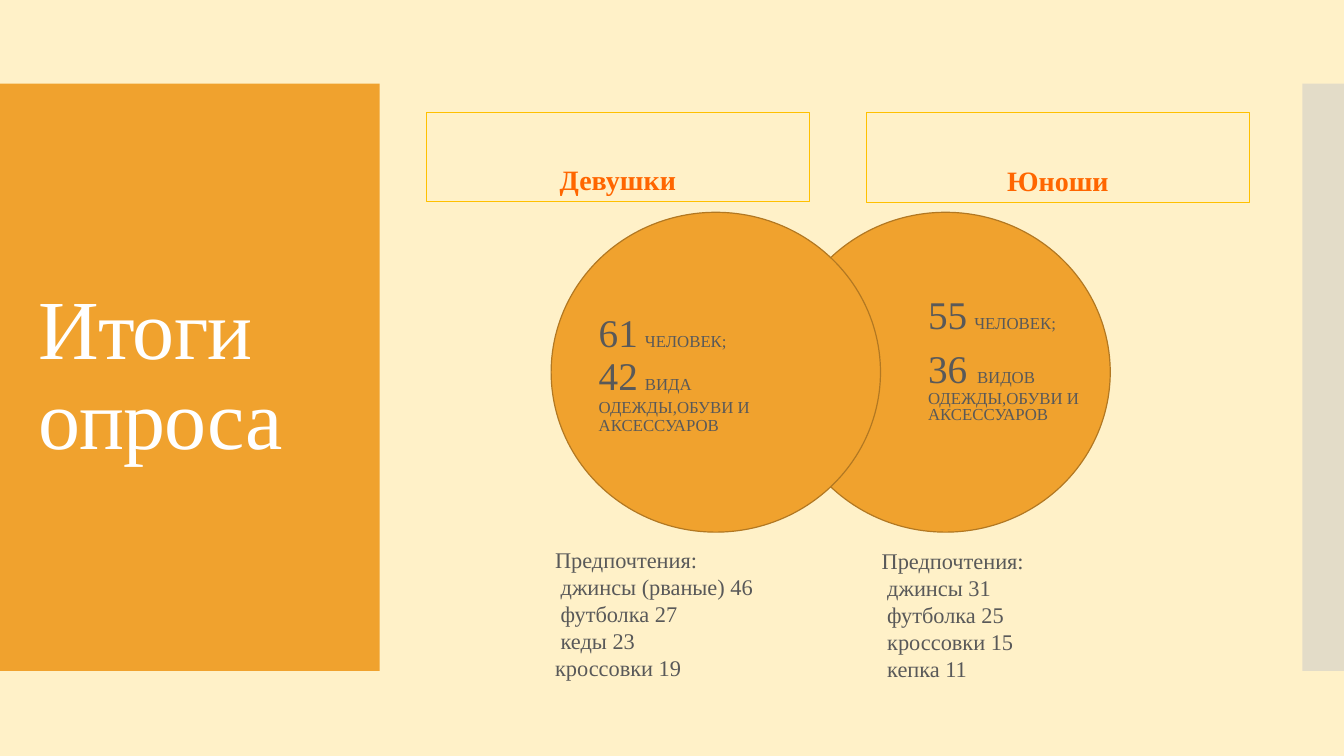
from lxml import etree
from pptx import Presentation
from pptx.dml.color import RGBColor
from pptx.enum import shapes, text
from pptx.oxml import ns
from pptx.util import Cm, Pt

CREAM = RGBColor(0xFF, 0xF1, 0xC8)
ORANGE = RGBColor(0xF0, 0xA2, 0x2E)
BROWN = RGBColor(0xB2, 0x78, 0x22)
GOLD = RGBColor(0xFF, 0xC0, 0x00)
FLAME = RGBColor(0xFF, 0x66, 0x00)
SILVER = RGBColor(0xC8, 0xC8, 0xC8)
GREY = RGBColor(0x59, 0x59, 0x59)
WHITE = RGBColor(0xFF, 0xFF, 0xFF)
FONT = "Times New Roman"


def write(box, paras, size=16, color=GREY, bold=False, align=text.PP_ALIGN.LEFT,
          anchor=text.MSO_ANCHOR.TOP, spacing=1.0, before=0, tracking=0):
    """Fill a box; each paragraph is a string or a list of (string, size)."""
    frame = box.text_frame
    frame.word_wrap = True
    frame.auto_size = text.MSO_AUTO_SIZE.NONE
    frame.vertical_anchor = anchor
    for index, spans in enumerate(paras):
        para = frame.add_paragraph() if index else frame.paragraphs[0]
        para.alignment = align
        para.line_spacing = spacing
        para.space_before = Pt(before)
        for words, points in [(spans, size)] if isinstance(spans, str) else spans:
            span = para.add_run()
            span.text = words
            span.font.name = FONT
            span.font.size = Pt(points)
            span.font.bold = bold
            span.font.color.rgb = color
            if tracking:
                span._r.get_or_add_rPr().set("spc", str(tracking))


class Survey:
    def __init__(self, deck):
        self.page = deck.slides.add_slide(deck.slide_layouts[5])
        self.page.background.fill.solid()
        self.page.background.fill.fore_color.rgb = CREAM

    def shape(self, kind, place, fill=None, line=None, width=0.75, alpha=None):
        box = self.page.shapes.add_shape(kind, *map(Cm, place))
        box.shadow.inherit = False
        if fill is None:
            box.fill.background()
        else:
            box.fill.solid()
            box.fill.fore_color.rgb = fill
        if alpha is not None:
            color = box.fill._xPr.find(".//" + ns.qn("a:srgbClr"))
            etree.SubElement(color, ns.qn("a:alpha")).set("val", str(alpha * 1000))
        if line is None:
            box.line.fill.background()
        else:
            box.line.color.rgb = line
            box.line.width = Pt(width)
        return box

    def panel(self, place, fill, alpha=None):
        self.shape(shapes.MSO_SHAPE.RECTANGLE, place, fill, alpha=alpha)

    def circle(self, left):
        self.shape(shapes.MSO_SHAPE.FLOWCHART_CONNECTOR, (left, 5.35, 8.3, 8.06),
                   ORANGE, BROWN, 0.85)

    def title(self, words, place):
        box = self.page.shapes.title
        box.left, box.top, box.width, box.height = map(Cm, place)
        box._element.getparent().append(box._element)  # bring above the panel
        write(box, [words], size=60, color=WHITE, spacing=0.9,
              anchor=text.MSO_ANCHOR.MIDDLE, tracking=-60)

    def heading(self, words, left, height):
        box = self.shape(shapes.MSO_SHAPE.RECTANGLE, (left, 2.84, 9.66, height), line=GOLD)
        write(box, [words], size=20, color=FLAME, bold=True, spacing=0.9,
              align=text.PP_ALIGN.CENTER, anchor=text.MSO_ANCHOR.BOTTOM)

    def note(self, paras, place, indent=0.25, bottom=0.13, **style):
        box = self.page.shapes.add_textbox(*map(Cm, place))
        box.text_frame.margin_left = Cm(indent)
        box.text_frame.margin_bottom = Cm(bottom)
        write(box, paras, **style)


def main():
    deck = Presentation()
    deck.slide_width, deck.slide_height = Cm(33.87), Cm(19.05)
    survey = Survey(deck)

    # Side panels, circles and title
    survey.panel((0, 2.11, 9.57, 14.8), ORANGE)
    survey.panel((32.82, 2.11, 1.05, 14.8), SILVER, alpha=50)
    for left in (19.68, 13.89):
        survey.circle(left)
    survey.title("Итоги опроса", (0.71, 3.12, 8.18, 12.78))

    # Group headings
    survey.heading("Девушки", 10.74, 2.24)
    survey.heading("Юноши", 21.83, 2.27)

    # Totals inside the circles
    middle = text.MSO_ANCHOR.MIDDLE
    survey.note([[("61", 28), (" ", 20), ("ЧЕЛОВЕК;", 12), (" ", 20), ("42", 28),
                  (" ", 20), ("ВИДА ОДЕЖДЫ,ОБУВИ И АКСЕССУАРОВ", 12)]],
                (14.33, 7.44, 5.33, 3.99), indent=0.76, anchor=middle, spacing=0.9)
    survey.note([[("55", 28), (" ", 20), ("ЧЕЛОВЕК;", 12)],
                 [("36 ", 28), ("ВИДОВ ОДЕЖДЫ,ОБУВИ И АКСЕССУАРОВ", 12)]],
                (22.63, 7.87, 5.33, 3.56), indent=0.76, bottom=1.2,
                anchor=middle, spacing=0.8, before=12)

    # Preferences below the circles
    survey.note(["Предпочтения:", " джинсы (рваные) 46", " футболка 27", " кеды 23",
                 "кроссовки 19"], (13.74, 13.64, 8.61, 3.68))
    survey.note(["Предпочтения:", " джинсы 31", " футболка 25", " кроссовки 15",
                 " кепка 11"], (21.97, 13.67, 9.53, 3.68))

    deck.save("out.pptx")


if __name__ == "__main__":
    main()
